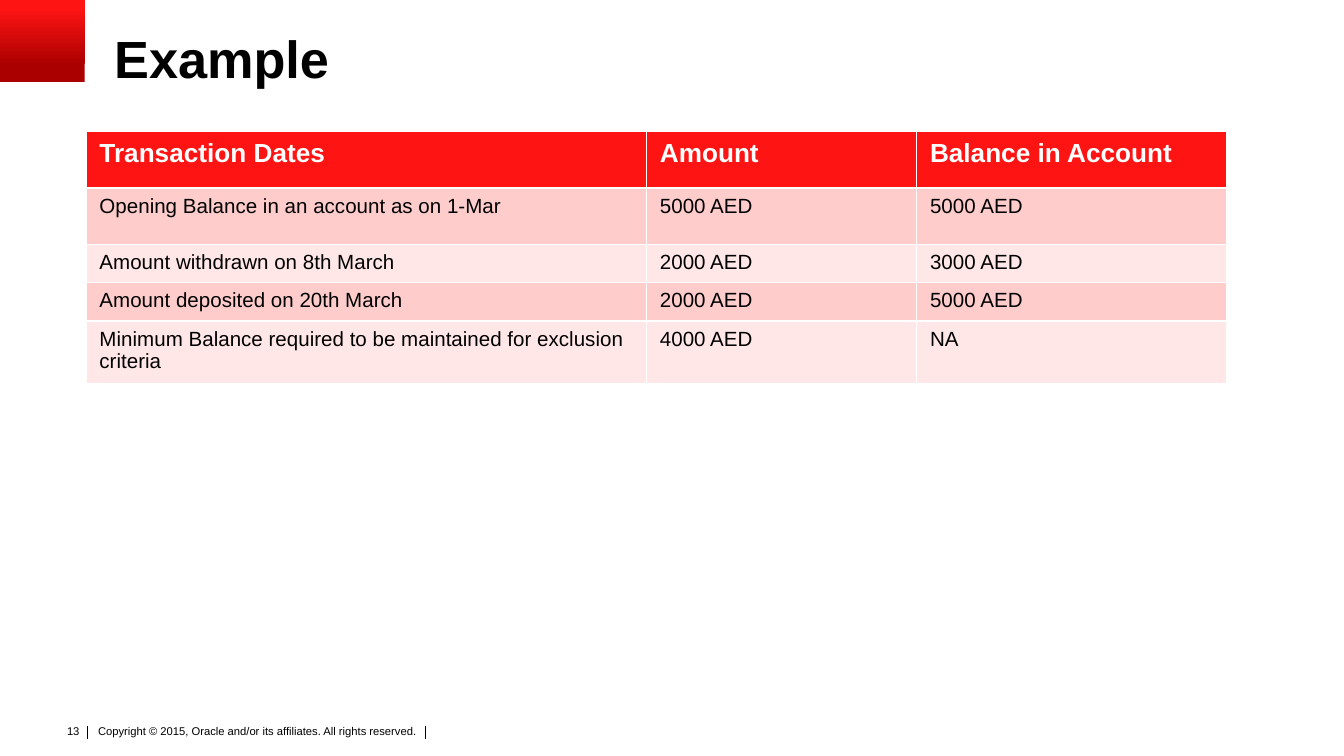
from dataclasses import dataclass
from typing import NamedTuple

from lxml import etree
from pptx import Presentation
from pptx.dml.color import RGBColor
from pptx.enum.shapes import MSO_CONNECTOR, MSO_SHAPE
from pptx.enum.text import MSO_ANCHOR, MSO_AUTO_SIZE, PP_ALIGN
from pptx.oxml.ns import qn
from pptx.util import Inches, Length, Pt

LEFT, RIGHT = PP_ALIGN.LEFT, PP_ALIGN.RIGHT
TOP = MSO_ANCHOR.TOP
NO_AUTOFIT = MSO_AUTO_SIZE.NONE
RECTANGLE = MSO_SHAPE.RECTANGLE
STRAIGHT = MSO_CONNECTOR.STRAIGHT
TITLE_ONLY = 5

GRID_COLUMNS, GRID_ROWS = 100, 56.25
GRID_STEP = Inches(0.1)


@dataclass(frozen=True)
class Theme:
    font: str = "Arial"
    ink: str = "000000"
    paper: str = "FFFFFF"
    red: str = "FF1414"
    dark_red: str = "AA0000"
    bands: tuple[str, str] = ("FFCCCC", "FFE7E7")
    title_size: float = 28
    header_size: float = 14
    body_size: float = 11
    footer_size: float = 6
    rule: float = 0.5


class Box(NamedTuple):
    """Left, top, width and height in grid steps."""
    left: float
    top: float
    width: float
    height: float

    def lengths(self) -> list[Length]:
        return [grid(value) for value in self]


class Row(NamedTuple):
    height: float
    cells: tuple[str, str, str]


THEME = Theme()
COLUMN_WIDTHS = (41.7, 20.1, 23.1)
ROWS = (
    Row(4.2, ("Transaction Dates", "Amount", "Balance in Account")),
    Row(4.2, ("Opening Balance in an account as on 1-Mar", "5000 AED", "5000 AED")),
    Row(2.4, ("Amount withdrawn on 8th March", "2000 AED", "3000 AED")),
    Row(2.4, ("Amount deposited on 20th March", "2000 AED", "5000 AED")),
    Row(4.2, ("Minimum Balance required to be maintained for exclusion criteria",
              "4000 AED", "NA")),
)
TABLE_BOX = Box(6.4, 9.8, sum(COLUMN_WIDTHS), sum(row.height for row in ROWS))
FOOTER_RULES = (6.5, 31.65)
COPYRIGHT = "Copyright © 2015, Oracle and/or its affiliates. All rights reserved."


def grid(steps: float) -> Length:
    return Length(round(steps * GRID_STEP))


def rgb(colour: str) -> RGBColor:
    return RGBColor.from_string(colour)


def write(frame, text: str, *, size: float, colour: str = THEME.ink,
          bold: bool = False, align=LEFT, spacing: float = 1.0) -> None:
    paragraph = frame.paragraphs[0]
    paragraph.alignment = align
    paragraph.line_spacing = spacing
    run = paragraph.add_run()
    run.text = text
    run.font.name = THEME.font
    run.font.size = Pt(size)
    run.font.bold = bold
    run.font.color.rgb = rgb(colour)


def set_margins(frame, horizontal: float, vertical: float) -> None:
    frame.margin_left = frame.margin_right = grid(horizontal)
    frame.margin_top = frame.margin_bottom = grid(vertical)


def add_title(slide, text: str, box: Box) -> None:
    title = slide.shapes.title
    title.left, title.top, title.width, title.height = box.lengths()
    frame = title.text_frame
    frame.auto_size = NO_AUTOFIT
    frame.vertical_anchor = TOP
    set_margins(frame, 0, 0)
    write(frame, text, size=THEME.title_size, bold=True, spacing=0.9)


def add_corner_block(slide, box: Box) -> None:
    block = slide.shapes.add_shape(RECTANGLE, *box.lengths())
    block.shadow.inherit = False
    block.line.fill.background()
    block.fill.gradient()
    block.fill.gradient_angle = 90
    shades = ((0.2, THEME.dark_red), (0.9, THEME.red))
    for stop, (position, colour) in zip(block.fill.gradient_stops, shades):
        stop.position = position
        stop.color.rgb = rgb(colour)


def add_footer_rule(slide, x: float) -> None:
    rule = slide.shapes.add_connector(STRAIGHT, grid(x), grid(54), grid(x), grid(55))
    rule.line.color.rgb = rgb(THEME.ink)
    rule.line.width = Pt(THEME.rule)
    etree.SubElement(rule._element.spPr, qn("a:effectLst"))


def add_footer(slide) -> None:
    notice = slide.shapes.add_textbox(*Box(6.9, 53.7, 27.4, 2.4).lengths()).text_frame
    notice.word_wrap = True
    set_margins(notice, 0.4, 0.2)
    write(notice, COPYRIGHT, size=THEME.footer_size)
    for x in FOOTER_RULES:
        add_footer_rule(slide, x)
    number = slide.shapes.add_textbox(*Box(3.9, 53.4, 3, 2).lengths()).text_frame
    number.word_wrap = False
    write(number, "13", size=THEME.footer_size, align=RIGHT)


def add_balance_table(slide) -> None:
    """The default table style supplies the white borders."""
    table = slide.shapes.add_table(
        len(ROWS), len(COLUMN_WIDTHS), *TABLE_BOX.lengths()).table
    for column, width in zip(table.columns, COLUMN_WIDTHS):
        column.width = grid(width)
    for index, row in enumerate(ROWS):
        table.rows[index].height = grid(row.height)
        header = index == 0
        for cell, text in zip(table.rows[index].cells, row.cells):
            cell.fill.solid()
            cell.fill.fore_color.rgb = rgb(
                THEME.red if header else THEME.bands[(index - 1) % 2])
            write(cell.text_frame, text, bold=header,
                  size=THEME.header_size if header else THEME.body_size,
                  colour=THEME.paper if header else THEME.ink)


def main() -> None:
    presentation = Presentation()
    presentation.slide_width = grid(GRID_COLUMNS)
    presentation.slide_height = grid(GRID_ROWS)
    slide = presentation.slides.add_slide(presentation.slide_layouts[TITLE_ONLY])
    add_footer(slide)
    add_corner_block(slide, Box(0, 0, 6.3, 6.1))
    add_title(slide, "Example", Box(8.5, 2.5, 90, 8.4))
    add_balance_table(slide)
    presentation.save("out.pptx")


if __name__ == "__main__":
    main()
